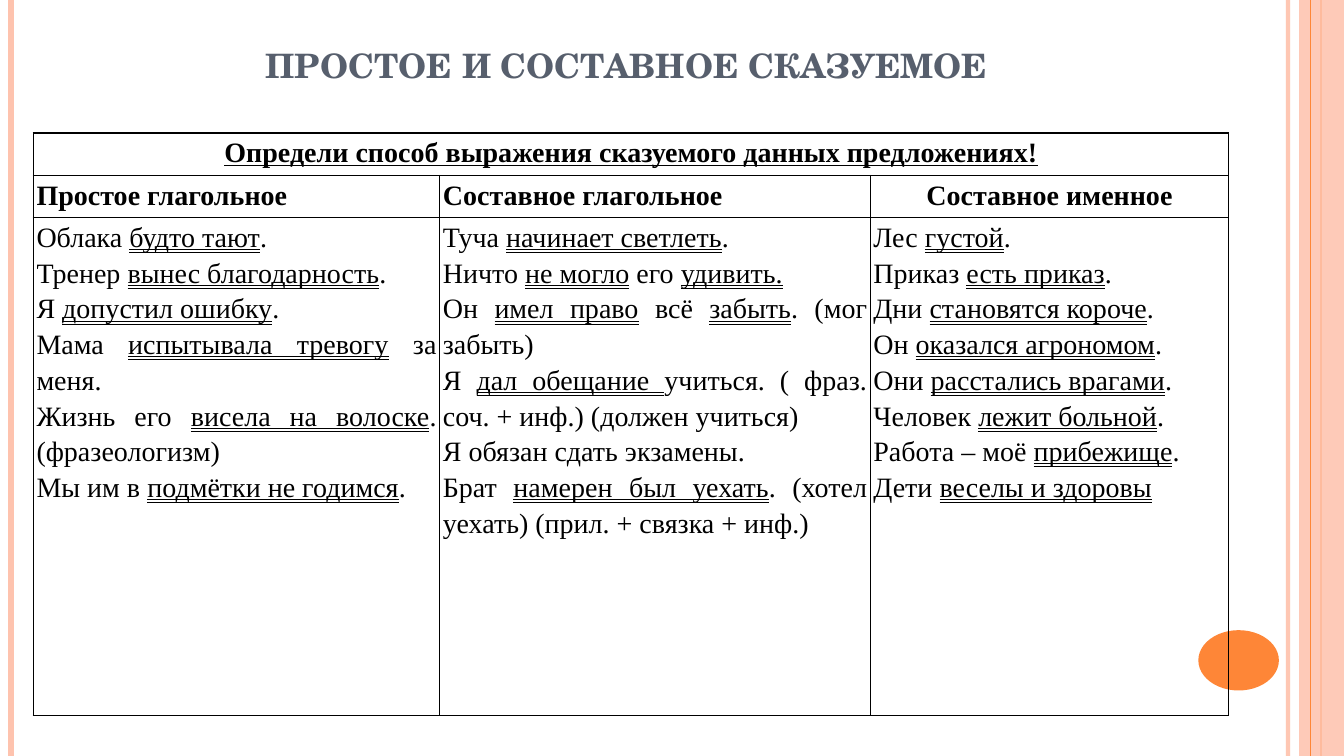
import pptx
import pptx.util
import pptx.dml.color
import pptx.enum.shapes
import pptx.enum.text
import pptx.oxml
import pptx.oxml.ns
from lxml import etree

Cm = pptx.util.Cm
Pt = pptx.util.Pt
ALIGN = pptx.enum.text.PP_ALIGN
UNDERLINE = pptx.enum.text.MSO_UNDERLINE

COLORS = {"peach": "FEC3AE", "orange": "FE8637", "slate": "575F6D", "ink": "000000"}
TITLE = "ПРОСТОЕ И СОСТАВНОЕ СКАЗУЕМОЕ"
TASK = "Определи способ выражения сказуемого данных предложениях!"
KINDS = [
    ("Простое глагольное", ALIGN.JUSTIFY, 10.24, [
        "Облака _будто тают_.",
        "Тренер _вынес благодарность_.",
        "Я _допустил ошибку_.",
        "Мама _испытывала тревогу_ за меня.",
        "Жизнь его _висела на волоске_. (фразеологизм)",
        "Мы им в _подмётки не годимся_.",
    ]),
    ("Составное глагольное", ALIGN.LEFT, 10.85, [
        "Туча _начинает светлеть_.",
        "Ничто _не могло_ его _удивить._",
        "Он _имел право_ всё _забыть_. (мог забыть)",
        "Я _дал обещание _учиться. ( фраз. соч. + инф.) (должен учиться)",
        "Я обязан сдать экзамены.",
        "Брат _намерен был уехать_. (хотел уехать) (прил. + связка + инф.)",
    ]),
    ("Составное именное", ALIGN.CENTER, 9.04, [
        "Лес _густой_.",
        "Приказ _есть приказ_.",
        "Дни _становятся короче_.",
        "Он _оказался агрономом_.",
        "Они _расстались врагами_.",
        "Человек _лежит больной_.",
        "Работа – моё _прибежище_.",
        "Дети _веселы и здоровы_",
    ]),
]
ROW_HEIGHTS = [1.07, 1.07, 12.53]
STRIPES = [(32.46, "peach", 3, 93), (0.28, "peach", 4.5, 100), (33.3, "orange", 1.5, 100)]
INNER_STRIPE = (33.02, "orange", 0.75, 100)
WIDTH, HEIGHT = 33.87, 19.05


def rgb(name):
    return pptx.dml.color.RGBColor.from_string(COLORS[name])


def set_alpha(element, percent):
    color = next(element.iter(pptx.oxml.ns.qn("a:srgbClr")))
    etree.SubElement(color, pptx.oxml.ns.qn("a:alpha")).set("val", str(percent * 1000))


def add_stripe(slide, x, color, weight, opacity):
    stripe = slide.shapes.add_connector(
        pptx.enum.shapes.MSO_CONNECTOR.STRAIGHT, Cm(x), Cm(0), Cm(x), Cm(HEIGHT))
    stripe.line.color.rgb = rgb(color)
    stripe.line.width = Pt(weight)
    if opacity < 100:
        set_alpha(stripe.line._ln, opacity)
    etree.SubElement(stripe._element.spPr, pptx.oxml.ns.qn("a:effectLst"))


def add_plain(slide, kind, color, *box):
    shape = slide.shapes.add_shape(kind, *map(Cm, box))
    shape.shadow.inherit = False
    shape.fill.solid()
    shape.fill.fore_color.rgb = rgb(color)
    shape.line.fill.background()
    return shape


def style(paragraph, align, font, size, color, bold):
    paragraph.alignment = align
    paragraph.font.name = font
    paragraph.font.size = Pt(size)
    paragraph.font.bold = bold
    paragraph.font.color.rgb = rgb(color)


def write_cell(cell, lines, align, bold, underline):
    for i, line in enumerate(lines):
        paragraph = cell.text_frame.paragraphs[0] if i == 0 else cell.text_frame.add_paragraph()
        paragraph.line_spacing = 1.15
        style(paragraph, align, "Times New Roman", 20, "ink", bold)
        for j, part in enumerate(line.split("_")):
            if part:
                run = paragraph.add_run()
                run.text = part
                if j % 2:
                    run.font.underline = underline


def frame_cell(cell):
    cell.margin_left = cell.margin_right = Cm(0.08)
    cell.margin_top = cell.margin_bottom = Cm(0)
    properties = cell._tc.get_or_add_tcPr()
    for side in "LRTB":
        properties.append(pptx.oxml.parse_xml(
            f'<a:ln{side} {pptx.oxml.ns.nsdecls("a")} w="12700"><a:solidFill>'
            f'<a:srgbClr val="{COLORS["ink"]}"/></a:solidFill></a:ln{side}>'))
    cell.fill.background()


def add_predicates(slide):
    widths = [width for _, _, width, _ in KINDS]
    table = slide.shapes.add_table(
        len(ROW_HEIGHTS), len(KINDS), Cm(0.84), Cm(3.35),
        Cm(sum(widths)), Cm(sum(ROW_HEIGHTS))).table
    table.first_row = table.horz_banding = False
    for row, height in zip(table.rows, ROW_HEIGHTS):
        row.height = Cm(height)
    for cell in table.iter_cells():
        frame_cell(cell)
    table.cell(0, 0).merge(table.cell(0, len(KINDS) - 1))
    write_cell(table.cell(0, 0), [f"_{TASK}_"], ALIGN.CENTER, True, UNDERLINE.SINGLE_LINE)
    for i, (kind, align, width, sentences) in enumerate(KINDS):
        table.columns[i].width = Cm(width)
        write_cell(table.cell(1, i), [kind], align, True, None)
        write_cell(table.cell(2, i), sentences, ALIGN.JUSTIFY, False, UNDERLINE.DOUBLE_LINE)


def main():
    """Build the slide on simple and compound predicates."""
    deck = pptx.Presentation()
    deck.slide_width, deck.slide_height = Cm(WIDTH), Cm(HEIGHT)
    slide = deck.slides.add_slide(deck.slide_layouts[6])
    shapes = pptx.enum.shapes.MSO_SHAPE

    for stripe in STRIPES:
        add_stripe(slide, *stripe)
    band = add_plain(slide, shapes.RECTANGLE, "peach", 32.74, 0, WIDTH - 32.74, HEIGHT)
    set_alpha(band._element.spPr, 87)
    add_stripe(slide, *INNER_STRIPE)
    add_plain(slide, shapes.OVAL, "orange", 30.2, 15.88, 2.03, 1.52)

    title = slide.shapes.add_textbox(Cm(1.96), Cm(0.64), Cm(27.66), Cm(1.63)).text_frame
    title.word_wrap = True
    title.vertical_anchor = pptx.enum.text.MSO_ANCHOR.BOTTOM
    title.text = TITLE
    style(title.paragraphs[0], ALIGN.CENTER, "TeX Gyre Schola", 24, "slate", True)

    add_predicates(slide)
    deck.save("out.pptx")


if __name__ == "__main__":
    main()
